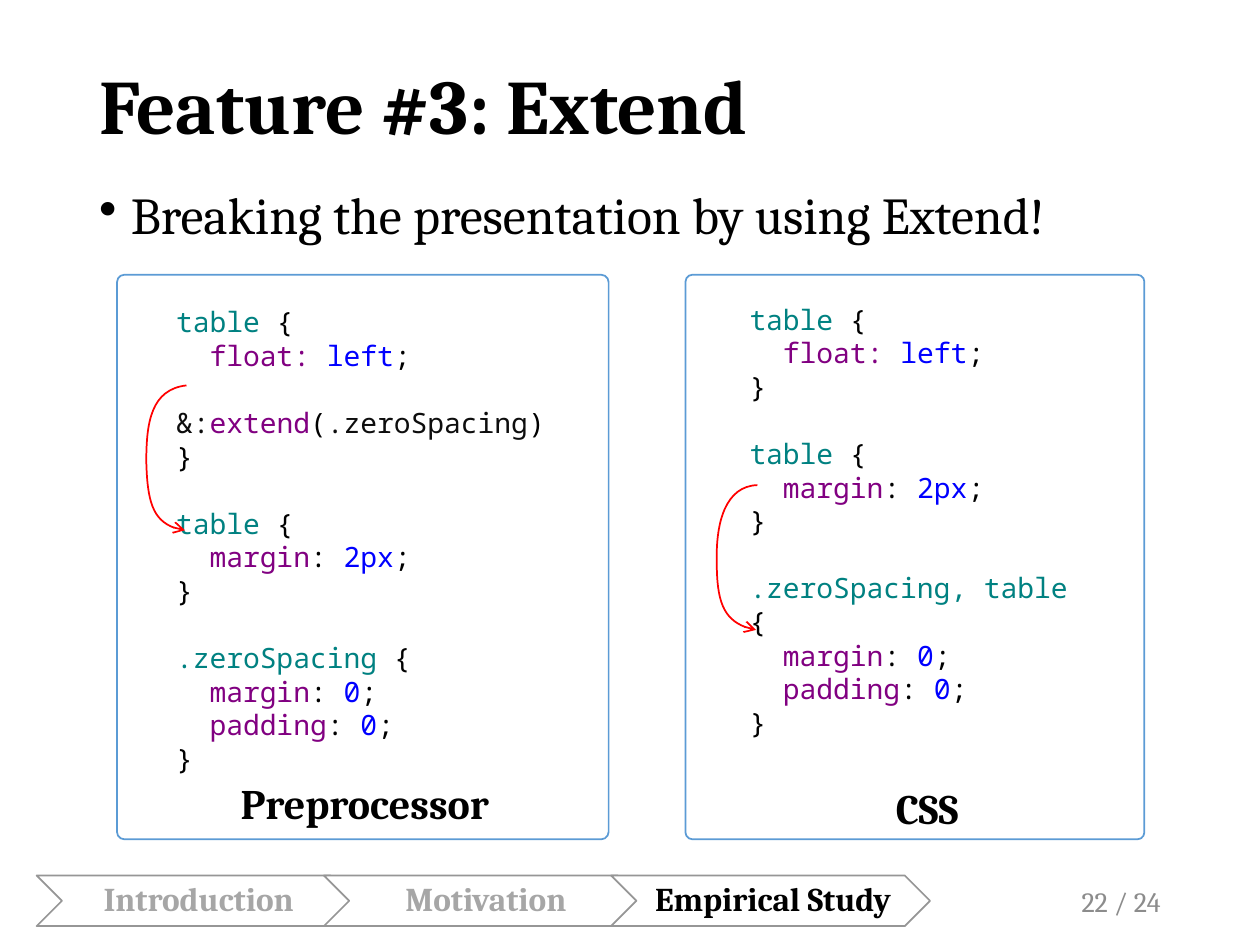
from lxml.etree import SubElement
from pptx import Presentation
from pptx.dml.color import RGBColor
from pptx.enum.shapes import MSO_SHAPE
from pptx.enum.text import MSO_ANCHOR, PP_ALIGN
from pptx.oxml.ns import qn
from pptx.util import Cm, Pt

BLACK, GREY, FADED = "000000", "8C8C8C", "A6A6A6"
SELECTOR, PROPERTY, VALUE, PLAIN = "008181", "810081", "0000FF", "0D0D0D"
CODE_LINE = 19.2


def color(hex_code):
    return RGBColor.from_string(hex_code)


class Deck:
    """Holds the style and the current slide."""
    serif, mono = "Cambria", "Noto Sans Mono"

    def __init__(self, width, height):
        self.presentation = Presentation()
        self.presentation.slide_width = Cm(width)
        self.presentation.slide_height = Cm(height)
        blank = self.presentation.slide_layouts[6]
        self.slide = self.presentation.slides.add_slide(blank)

    def outline(self, shape, line, fill=None):
        shape.shadow.inherit = False
        if fill:
            shape.fill.solid()
            shape.fill.fore_color.rgb = color(fill)
        else:
            shape.fill.background()
        shape.line.color.rgb = color(line)
        shape.line.width = Pt(1)

    def shape(self, kind, box, line, fill=None, corner=None, parent=None):
        shapes = (parent or self.slide).shapes
        shape = shapes.add_shape(kind, *map(Cm, box))
        self.outline(shape, line, fill)
        if corner is not None:
            shape.adjustments[0] = corner

    def frame(self, box, wrap=True, parent=None, anchor=MSO_ANCHOR.TOP):
        shapes = (parent or self.slide).shapes
        frame = shapes.add_textbox(*map(Cm, box)).text_frame
        frame.word_wrap = wrap
        frame.vertical_anchor = anchor
        return frame

    def text(self, words, box, size, ink=BLACK, bold=False, align=PP_ALIGN.LEFT,
             spacing=None, **layout):
        frame = self.frame(box, **layout)
        line = frame.paragraphs[0]
        line.text = words
        line.alignment = align
        line.line_spacing = spacing
        font = line.font
        font.name, font.size, font.bold = self.serif, Pt(size), bold
        font.color.rgb = color(ink)
        return frame

    def bullet(self, words, box, size):
        line = self.text(words, box, size, spacing=0.9).paragraphs[0]
        properties = line._p.get_or_add_pPr()
        properties.set("marL", str(Cm(0.64)))
        properties.set("indent", str(-Cm(0.64)))
        marker = properties.makeelement(qn("a:buChar"), {"char": "•"})
        properties.find(qn("a:lnSpc")).addnext(marker)

    def code(self, rules, box):
        frame = self.frame(box)
        line = None
        for number, rule in enumerate(rules):
            for position, pieces in enumerate(rule):
                line = frame.add_paragraph() if line else frame.paragraphs[0]
                line.font.name, line.font.size = self.mono, Pt(16)
                if number and position == 0:
                    line.space_before = Pt(CODE_LINE)
                for words, ink in pieces:
                    run = line.add_run()
                    run.text = words
                    run.font.color.rgb = color(ink)

    def curved_arrow(self, start, points, line):
        """Draws cubic curves; every three points make one curve."""
        builder = self.slide.shapes.build_freeform(
            *map(Cm, start), scale=1.0)
        builder.add_line_segments([(Cm(x), Cm(y)) for x, y in points], close=False)
        arrow = builder.convert_to_shape()
        self.outline(arrow, line)
        segments = list(arrow._element.iter(qn("a:lnTo")))
        for first in range(0, len(segments), 3):
            curve = segments[first].makeelement(qn("a:cubicBezTo"), {})
            segments[first].addprevious(curve)
            for segment in segments[first:first + 3]:
                curve.append(segment[0])
                segment.getparent().remove(segment)
        SubElement(arrow.line._get_or_add_ln(), qn("a:tailEnd"), type="arrow")


def declaration(name, value, colon=BLACK):
    return [("  " + name, PROPERTY), (": ", colon), (value, VALUE), (";", BLACK)]


def css_rule(selector, *body):
    return [[(selector, SELECTOR), (" {", BLACK)], *body, [("}", BLACK)]]


def main():
    deck = Deck(25.4, 19.05)

    # Title and statement
    deck.text("Feature #3: Extend", (1.75, 1.02, 21.89, 2.36), 44, bold=True,
              spacing=0.9, anchor=MSO_ANCHOR.MIDDLE)
    deck.bullet("Breaking the presentation by using Extend!",
                (1.75, 3.71, 21.89, 1.63), 29.6)

    # Progress chevrons
    progress = deck.slide.shapes.add_group_shape()
    sections = (("Introduction", FADED), ("Motivation", FADED),
                ("Empirical Study", BLACK))
    for index, (section, ink) in enumerate(sections):
        left = 0.74 + 5.79 * index
        deck.shape(MSO_SHAPE.CHEVRON, (left, 17.65, 6.43, 1.02), "969696",
                   fill="FFFFFF", parent=progress)
        label = deck.text(section, (left + 0.5, 17.65, 5.41, 1.02), 19, ink,
                          bold=True, align=PP_ALIGN.CENTER, spacing=0.9,
                          parent=progress, anchor=MSO_ANCHOR.MIDDLE)
        label.margin_left = Cm(0.2)
        label.margin_right = label.margin_top = label.margin_bottom = Cm(0.08)

    # Code of both sides
    floating = declaration("float", "left", colon=PROPERTY)
    extending = [("  &:", PLAIN), ("extend", PROPERTY), ("(", BLACK),
                 (".zeroSpacing", PLAIN), (")", BLACK)]
    margin_rule = css_rule("table", declaration("margin", "2px"))
    zero = declaration("margin", "0"), declaration("padding", "0")
    preprocessor = [css_rule("table", floating, extending), margin_rule,
                    css_rule(".zeroSpacing", *zero)]
    css = [css_rule("table", floating), margin_rule,
           css_rule(".zeroSpacing, table", *zero)]

    # Panels with code and caption
    panels = (
        ("Preprocessor", preprocessor, (2.36, 9.91), (3.3, 6.02, 8, 9.14),
         (4.6, 15.54, 5.77, 1.27)),
        ("CSS", css, (13.82, 9.25), (14.86, 5.97, 7.06, 8.46),
         (17.81, 15.65, 1.88, 1.27)),
    )
    for caption, rules, (left, width), code_box, caption_box in panels:
        deck.shape(MSO_SHAPE.ROUNDED_RECTANGLE, (left, 5.54, width, 11.38),
                   "5B9BD5", corner=0.015)
        deck.code(rules, code_box)
        deck.text(caption, caption_box, 24, bold=True, wrap=False)

    # Arrows from the extending rule to its new place
    deck.curved_arrow((3.76, 7.77), [
        (3.05, 7.85), (2.95, 8.51), (2.95, 9.3),
        (2.97, 10.11), (3.12, 10.62), (3.73, 10.69)], "FF0000")
    deck.curved_arrow((15.27, 9.78), [
        (14.63, 9.8), (14.43, 10.52), (14.45, 11.33),
        (14.45, 12.12), (14.63, 12.6), (15.24, 12.7)], "FF0000")

    # Page number
    deck.text("22 / 24", (17.93, 17.65, 5.72, 1.02), 16, GREY,
              align=PP_ALIGN.RIGHT, anchor=MSO_ANCHOR.MIDDLE)

    deck.presentation.save("out.pptx")


if __name__ == "__main__":
    main()
